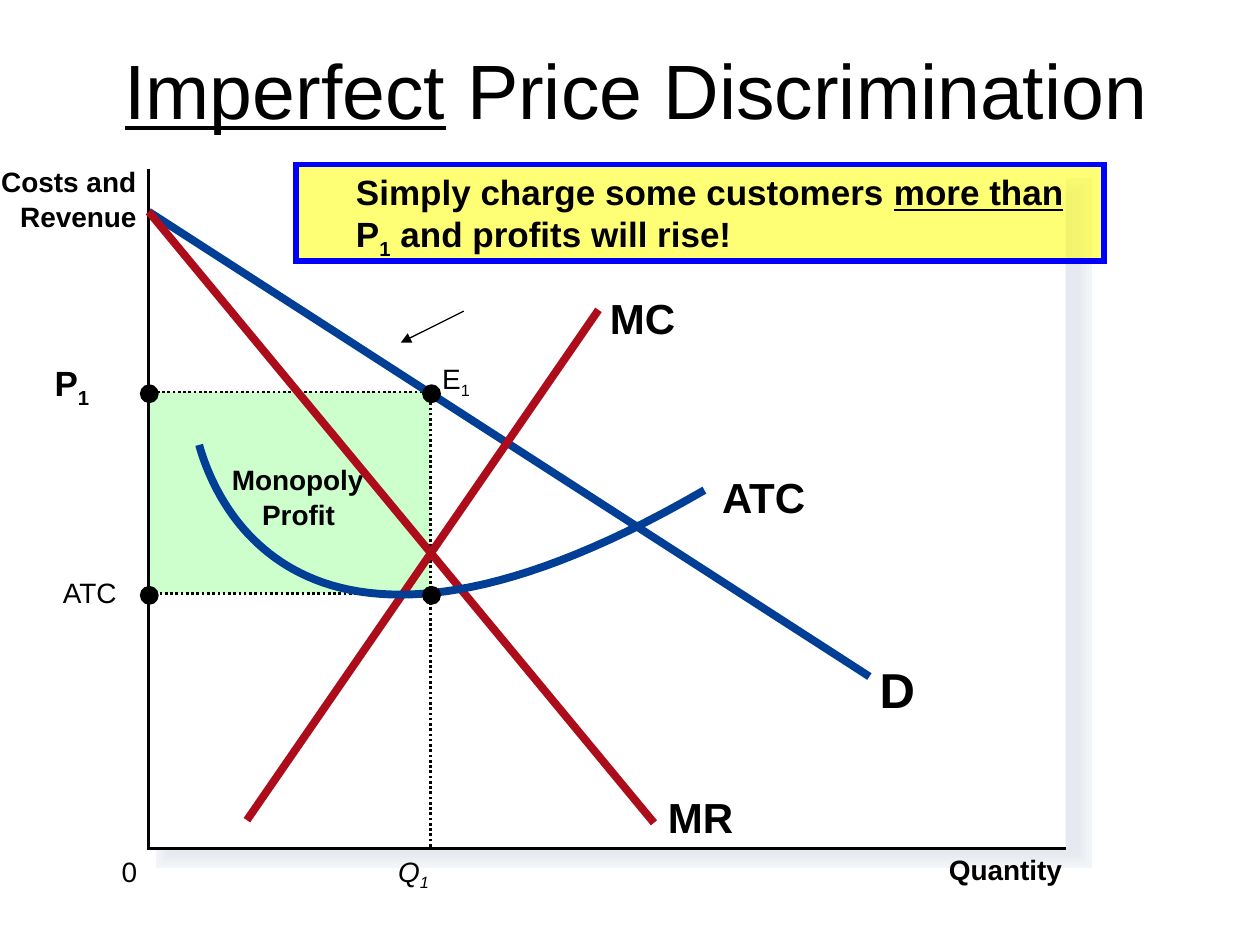
from lxml.etree import SubElement
from pptx import Presentation
from pptx.dml.color import RGBColor
from pptx.enum.dml import MSO_LINE
from pptx.enum.shapes import MSO_CONNECTOR, MSO_SHAPE
from pptx.enum.text import MSO_ANCHOR, PP_ALIGN
from pptx.oxml.ns import qn
from pptx.util import Pt

COLORS = {
    "black": "000000", "white": "FFFFFF", "blue": "003F95", "red": "AD0D1B",
    "profit": "CCFFCC", "callout": "FFFF00", "border": "0000FF",
}
SHADOWS = ["F3F6F9", "F2F4F8", "F1F4F7", "F0F2F5", "EEF1F4", "EDEFF3",
           "EBEEF2", "EAECF1", "E9EBF0", "E7EAEF", "E6E9EF"]
LEFT, TOP, RIGHT, BOTTOM = 85, 96.5, 609, 485
QUANTITY, PRICE, COST = 246, 224, 339.2
INTERCEPT = (LEFT, 121)
SLACK = 4


def style(shape, fill=None, line=None, width=1.5, dash=None):
    if fill:
        shape.fill.solid()
        shape.fill.fore_color.rgb = RGBColor.from_string(fill)
    elif hasattr(shape, "fill"):
        shape.fill.background()
    if line:
        shape.line.color.rgb = RGBColor.from_string(line)
        shape.line.width = Pt(width)
        shape.line.dash_style = dash
        SubElement(shape.line._get_or_add_ln(), qn("a:miter"), lim="800000")
    else:
        shape.line.fill.background()
    if hasattr(shape, "shadow"):
        shape.shadow.inherit = False
    else:
        SubElement(shape._element.spPr, qn("a:effectLst"))


def write(para, spans, size, bold=False, italic=False):
    para.font.name = "Arial"
    para.font.size = Pt(size)
    para.font.bold = bold
    para.font.italic = italic
    para.font.color.rgb = RGBColor.from_string(COLORS["black"])
    for text, mark in spans:
        span = para.add_run()
        span.text = text
        if mark == "underline":
            span.font.underline = True
        elif mark == "sub":
            span._r.get_or_add_rPr().set("baseline", "-25000")


deck = Presentation()
deck.slide_width, deck.slide_height = Pt(720), Pt(540)
page = deck.slides.add_slide(deck.slide_layouts[5])
shapes = page.shapes

title = shapes.title
title.left, title.top, title.width, title.height = Pt(39.6), Pt(5.8), Pt(648), Pt(90)
title.text_frame.vertical_anchor = MSO_ANCHOR.MIDDLE
heading = title.text_frame.paragraphs[0]
heading.alignment = PP_ALIGN.CENTER
write(heading, [("Imperfect", "underline"), (" Price Discrimination", None)], 44)

for step, color in enumerate(SHADOWS):
    layer = shapes.add_shape(MSO_SHAPE.RECTANGLE, Pt(97.2), Pt(110.2), Pt(518.4), Pt(377.3))
    style(layer, color, color, 16.6 - 1.51 * step)

areas = [
    (LEFT, TOP, RIGHT, BOTTOM, "white"),
    (LEFT, PRICE, QUANTITY, COST, "profit"),
]
for left, top, right, bottom, color in areas:
    area = shapes.add_shape(MSO_SHAPE.RECTANGLE, Pt(left), Pt(top), Pt(right - left), Pt(bottom - top))
    style(area, COLORS[color])

labels = [
    ([("Monopoly", None)], 132.5, 264.2, 75.6, 16, True, False),
    ([("Profit", None)], 149.8, 284.4, 41.8, 16, True, False),
    ([("ATC", None)], 36, 328.7, 31.9, 16, False, False),
    ([("Quantity", None)], 542.2, 487.4, 64.8, 16, True, False),
    ([("P", None), ("1", "sub")], 31.2, 206.6, 21, 20, True, False),
    ([("Q", None), ("1", "sub")], 227.5, 488, 18.7, 16, False, True),
    ([("0", None)], 69.5, 488, 8.9, 16, False, False),
    ([("Costs and", None)], 0.7, 94, 78, 16, True, False),
    ([("Revenue", None)], 11.5, 114, 67, 16, True, False),
    ([("D", None)], 502.6, 377, 20.2, 28, True, False),
    ([("MC", None)], 348.5, 167, 37.4, 24, True, False),
    ([("MR", None)], 381.6, 452.2, 37.4, 24, True, False),
    ([("ATC", None)], 412.6, 269.3, 49.7, 24, True, False),
    ([("E", None), ("1", "sub")], 252.7, 206.6, 16.6, 16, False, False),
]
for spans, left, top, width, size, bold, italic in labels:
    box = shapes.add_textbox(Pt(left), Pt(top), Pt(width + SLACK), Pt(size * 1.2))
    frame = box.text_frame
    frame.margin_left = frame.margin_top = frame.margin_right = frame.margin_bottom = 0
    frame.word_wrap = True
    write(frame.paragraphs[0], spans, size, bold, italic)

start, pull_start, pull_end, end = (113.8, 254.2), (123.1, 288), (174.2, 412.6), (402.5, 280.1)
average_cost = []
for step in range(61):
    t = step / 60
    average_cost.append([
        (1 - t) ** 3 * a + 3 * t * (1 - t) ** 2 * b + 3 * t ** 2 * (1 - t) * c + t ** 3 * d
        for a, b, c, d in zip(start, pull_start, pull_end, end)
    ])

outlines = [
    ([(LEFT, TOP), (LEFT, BOTTOM), (RIGHT, BOTTOM)], "black", 1.5, None),
    ([(QUANTITY, 483.8), (QUANTITY, PRICE), (LEFT, PRICE)], "black", 1.5, MSO_LINE.ROUND_DOT),
    ([(QUANTITY, COST), (LEFT, COST)], "black", 1.5, MSO_LINE.ROUND_DOT),
    ([INTERCEPT, (496.8, 386.6)], "blue", 4.5, None),
    ([(342, 177.1), (141.1, 468.7)], "red", 4.5, None),
    ([INTERCEPT, (373.7, 470.2)], "red", 4.5, None),
    (average_cost, "blue", 4.5, None),
    ([(265, 177.8), (229, 195.8)], "black", 0.75, None),
]
for points, color, width, dash in outlines:
    points = [(Pt(x), Pt(y)) for x, y in points]
    if len(points) == 2:
        outline = shapes.add_connector(MSO_CONNECTOR.STRAIGHT, *points[0], *points[1])
    else:
        builder = shapes.build_freeform(*points[0])
        builder.add_line_segments(points[1:], close=False)
        outline = builder.convert_to_shape()
    style(outline, None, COLORS[color], width, dash)
arrow = outline
SubElement(arrow.line._get_or_add_ln(), qn("a:tailEnd"), type="triangle")

for x in (85.3, 246.6):
    for y in (225, 340.2):
        dot = shapes.add_shape(MSO_SHAPE.OVAL, Pt(x - 5.4), Pt(y - 5.4), Pt(10.8), Pt(10.8))
        style(dot, COLORS["black"])

callout = shapes.add_shape(MSO_SHAPE.RECTANGLE, Pt(169.2), Pt(94), Pt(461.5), Pt(55.4))
style(callout, COLORS["callout"], COLORS["border"], 3.25)
tint = callout.fill._xPr.find(qn("a:solidFill"))[0]
SubElement(tint, qn("a:alpha"), val="54000")
frame = callout.text_frame
frame.word_wrap = True
frame.margin_left = Pt(34.2)
frame.vertical_anchor = MSO_ANCHOR.TOP
message = frame.paragraphs[0]
message.alignment = PP_ALIGN.LEFT
write(message, [("Simply charge some customers ", None), ("more than ", "underline"),
                ("P", None), ("1", "sub"), (" and profits will rise!", None)], 20, True)

deck.save("out.pptx")
